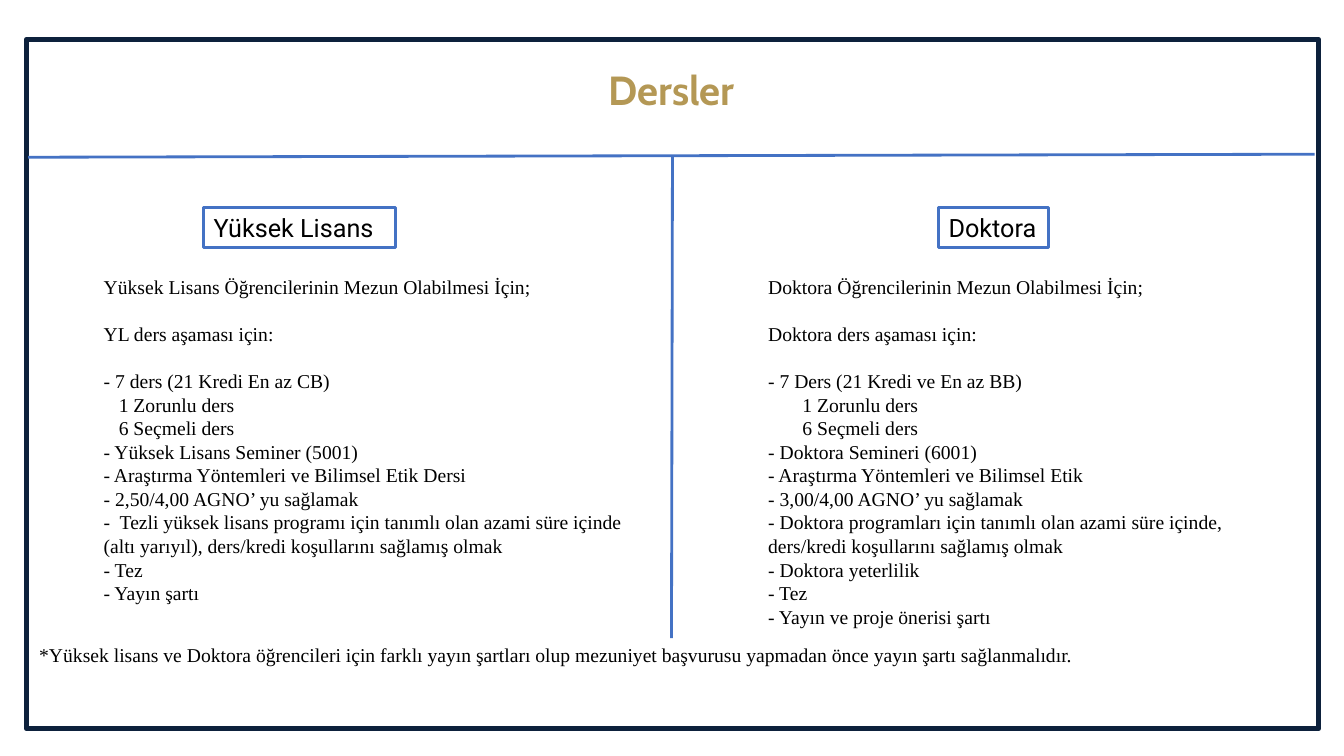
from pptx import Presentation
from pptx.dml.color import RGBColor
from pptx.enum.shapes import MSO_CONNECTOR, MSO_SHAPE
from pptx.enum.text import MSO_ANCHOR, PP_ALIGN
from pptx.oxml.ns import qn
from pptx.util import Emu, Pt
from lxml import etree

RECTANGLE = MSO_SHAPE.RECTANGLE
STRAIGHT = MSO_CONNECTOR.STRAIGHT
TOP, MIDDLE = MSO_ANCHOR.TOP, MSO_ANCHOR.MIDDLE
LEFT, CENTER = PP_ALIGN.LEFT, PP_ALIGN.CENTER

EMU_PER_PX = 9144
TITLE_ONLY = 5
NAVY, BLUE, GOLD, BLACK, WHITE = "0D213C", "4472C4", "B49855", "000000", "FFFFFF"
BODY_FONT, BODY_SIZE, BLANK_LINE = "Times New Roman", 14, 16.8

MASTER_INTRO = ["Yüksek Lisans Öğrencilerinin Mezun Olabilmesi İçin;",
                "YL ders aşaması için:", "- 7 ders (21 Kredi En az CB)"]
MASTER_ITEMS = [
    "- Yüksek Lisans Seminer (5001)",
    "- Araştırma Yöntemleri ve Bilimsel Etik Dersi",
    "- 2,50/4,00 AGNO’ yu sağlamak",
    "-  Tezli yüksek lisans programı için tanımlı olan azami süre içinde "
    "(altı yarıyıl), ders/kredi koşullarını sağlamış olmak",
    "- Tez",
    "- Yayın şartı",
]
DOCTORATE_INTRO = ["Doktora Öğrencilerinin Mezun Olabilmesi İçin;",
                   "Doktora ders aşaması için:", "- 7 Ders (21 Kredi ve En az BB)"]
DOCTORATE_ITEMS = [
    "- Doktora Semineri (6001)",
    "- Araştırma Yöntemleri ve Bilimsel Etik",
    "- 3,00/4,00 AGNO’ yu sağlamak",
    "- Doktora programları için tanımlı olan azami süre içinde, "
    "ders/kredi koşullarını sağlamış olmak",
    "- Doktora yeterlilik",
    "- Tez",
    "- Yayın ve proje önerisi şartı",
]
COURSE_SPLIT = ["1 Zorunlu ders", "6 Seçmeli ders"]
FOOTNOTE = ("*Yüksek lisans ve Doktora öğrencileri için farklı yayın şartları olup "
            "mezuniyet başvurusu yapmadan önce yayın şartı sağlanmalıdır.")


def px(length):
    """Turn whole px into EMU."""
    return Emu(length * EMU_PER_PX)


def color(hex_string):
    """Turn a hex string into a colour."""
    return RGBColor.from_string(hex_string)


def add_text(paragraph, text, font, size, hex_color, bold=False):
    """Add one formatted run to a paragraph."""
    run = paragraph.add_run()
    run.text = text
    run.font.name = font
    run.font.size = Pt(size)
    run.font.bold = bold
    run.font.color.rgb = color(hex_color)


def add_box(slide, left, top, width, height, line, weight, fill=None):
    """Add an outlined rectangle."""
    shape = slide.shapes.add_shape(RECTANGLE, px(left), px(top), px(width), px(height))
    shape.shadow.inherit = False
    if fill:
        shape.fill.solid()
        shape.fill.fore_color.rgb = color(fill)
    else:
        shape.fill.background()
    shape.line.color.rgb = color(line)
    shape.line.width = Pt(weight)
    return shape


def add_heading(slide, text, left, width):
    """Add a boxed column heading."""
    shape = add_box(slide, left, 206, width, 40, BLUE, 2, WHITE)
    frame = shape.text_frame
    frame.word_wrap = True
    frame.vertical_anchor = TOP
    frame.margin_right = 0
    paragraph = frame.paragraphs[0]
    paragraph.alignment = LEFT
    add_text(paragraph, text, "Roboto", 18, BLACK)


def add_body(slide, left, top, width, height, lines):
    """Add body text from (text, indent in px, space before in points) lines."""
    frame = slide.shapes.add_textbox(px(left), px(top), px(width), px(height)).text_frame
    frame.word_wrap = True
    for index, (text, indent, space) in enumerate(lines):
        paragraph = frame.add_paragraph() if index else frame.paragraphs[0]
        if indent:
            paragraph._p.get_or_add_pPr().set("marL", str(px(indent)))
        if space:
            paragraph.space_before = Pt(space)
        add_text(paragraph, text, BODY_FONT, BODY_SIZE, BLACK)


def requirement_lines(intro, items, indent):
    """Arrange a column: spaced intro, indented course split, then items."""
    lines = [(text, 0, BLANK_LINE if index else 0) for index, text in enumerate(intro)]
    lines += [(text, indent, 0) for text in COURSE_SPLIT]
    return lines + [(text, 0, 0) for text in items]


def add_divider(slide, start, end):
    """Add a blue line between two points."""
    connector = slide.shapes.add_connector(STRAIGHT, *map(px, start + end))
    connector.line.color.rgb = color(BLUE)
    connector.line.width = Pt(2)
    etree.SubElement(connector._element.spPr, qn("a:effectLst"))


def set_title(slide, text):
    """Place and format the slide title."""
    title = slide.shapes.title
    title.left, title.top, title.width, title.height = map(px, (29, 64, 1274, 49))
    frame = title.text_frame
    frame.margin_left = frame.margin_right = frame.margin_top = frame.margin_bottom = 0
    frame.vertical_anchor = MIDDLE
    paragraph = frame.paragraphs[0]
    paragraph.alignment = CENTER
    add_text(paragraph, text, "Cabin", 29, GOLD, True)


def main():
    """Build and save the slide."""
    presentation = Presentation()
    presentation.slide_width, presentation.slide_height = px(1333), px(750)
    slide = presentation.slides.add_slide(presentation.slide_layouts[TITLE_ONLY])
    set_title(slide, "Dersler")
    add_box(slide, 26, 39, 1282, 684, NAVY, 3.5)
    add_body(slide, 752, 268, 551, 364,
             requirement_lines(DOCTORATE_INTRO, DOCTORATE_ITEMS, 34))
    add_body(slide, 93, 268, 547, 340,
             requirement_lines(MASTER_INTRO, MASTER_ITEMS, 15))
    add_body(slide, 29, 633, 1274, 34, [(FOOTNOTE, 0, 0)])
    add_heading(slide, "Yüksek Lisans", 202, 190)
    add_heading(slide, "Doktora", 931, 109)
    add_divider(slide, (667, 154), (666, 633))
    add_divider(slide, (28, 156), (1304, 153))
    presentation.save("out.pptx")


if __name__ == "__main__":
    main()
